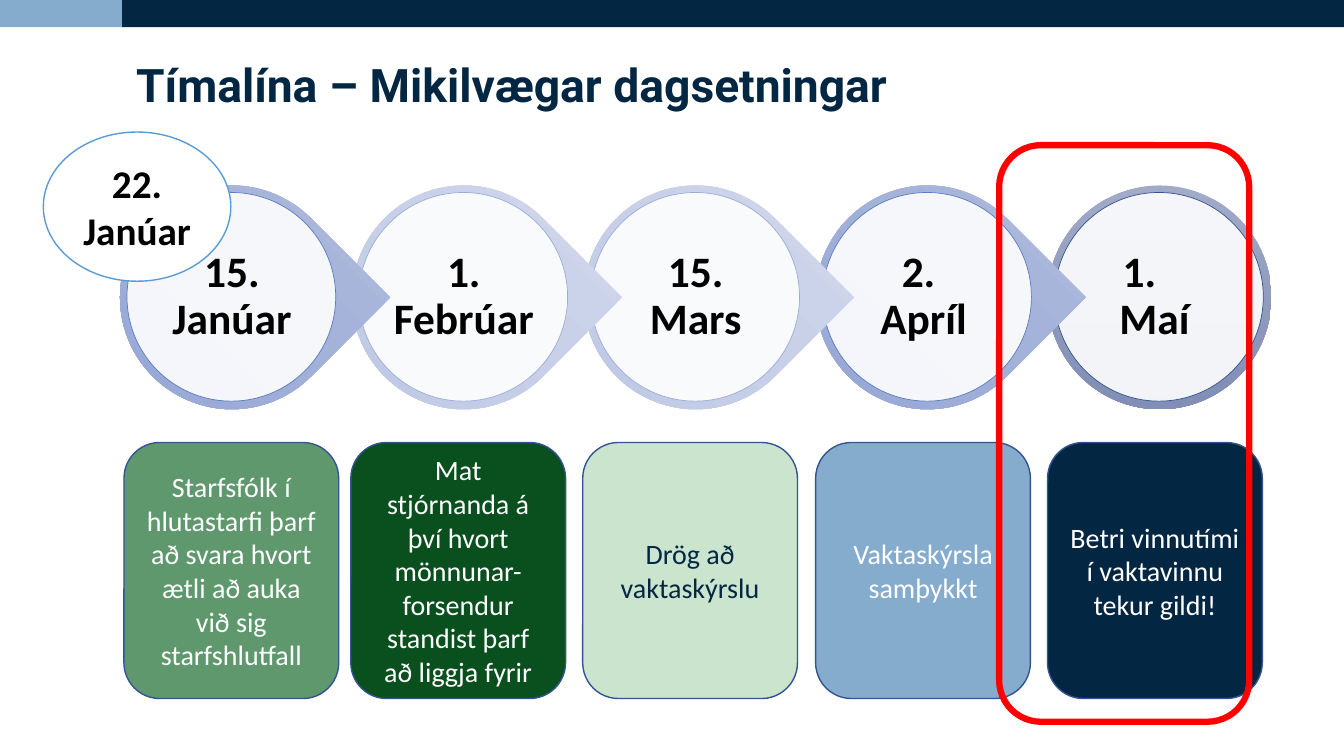
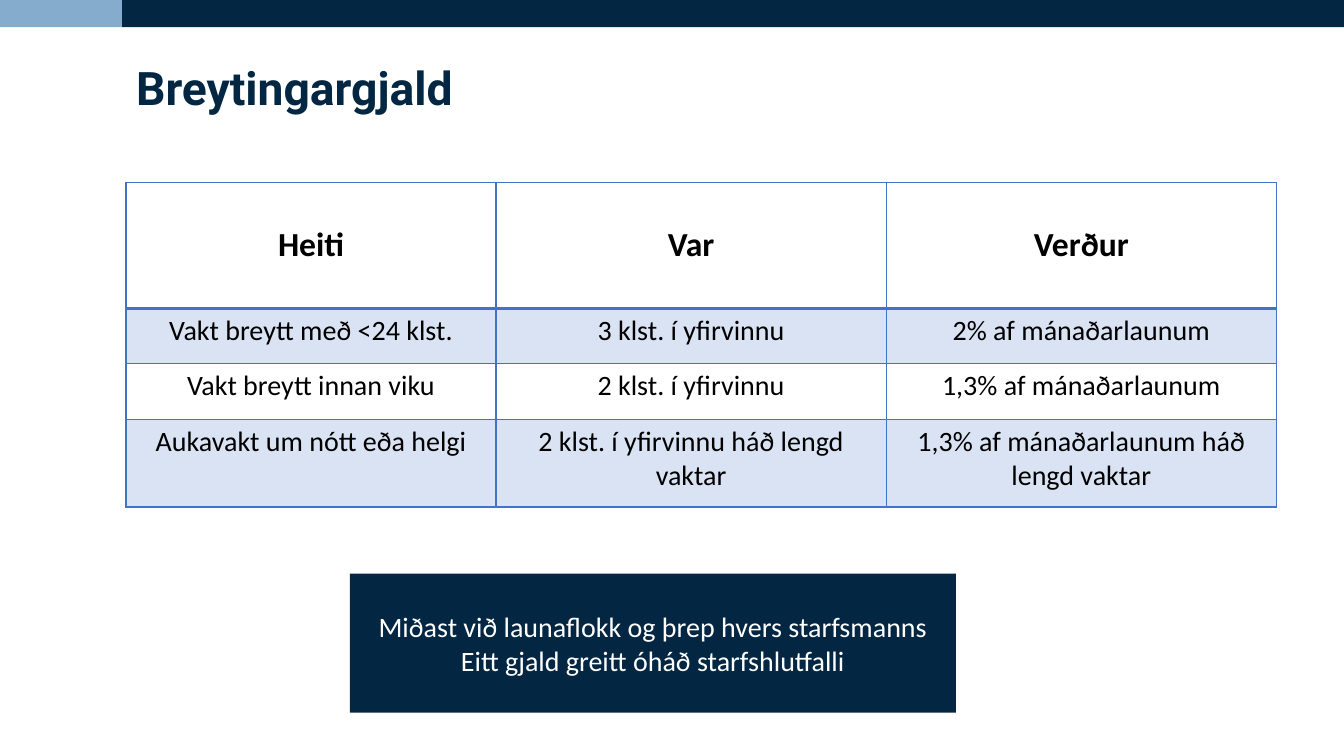
import pptx
import pptx.dml.color
import pptx.enum.shapes
import pptx.enum.text
import pptx.oxml
import pptx.oxml.ns
import pptx.util

Inches = pptx.util.Inches
SHAPES = pptx.enum.shapes.MSO_SHAPE
ANCHOR = pptx.enum.text.MSO_ANCHOR
ALIGN = pptx.enum.text.PP_ALIGN

# Shared colours and fonts
NAVY, SKY, WHITE, BLACK = "032742", "85ABCD", "FFFFFF", "000000"
OUTLINE, GRID, STRIPE = "325491", "4472C4", "DAE3F3"
TITLE_FONT, BODY_FONT = "Roboto", "Calibri"

# Gradient start, gradient end and ring line of the timeline markers
MEDIUM = ("B0BCDD", "92A4D4", "5B7BC0")
LIGHT = ("D2D8EC", "BCC7E4", "9DACD6")
DARK = ("A1AAC7", "818EB5", OUTLINE)

# Day, month, text shift, month indent, marker colours
DATES = [
    ("15.", "Janúar", 0, 0, MEDIUM),
    ("1.", "Febrúar", 0, 0, LIGHT),
    ("15.", "Mars", 0, 0, LIGHT),
    ("2.", "Apríl", -0.09, 0.1, MEDIUM),
    ("1.", "Maí", -0.2, 0.3, DARK),
]

# Left edge, text, fill, text colour
TASKS = [
    (1.23, "Starfsfólk í hlutastarfi þarf að svara hvort ætli að auka við sig "
           "starfshlutfall", "60986E", WHITE),
    (3.48, "Mat stjórnanda á því hvort mönnunar-forsendur standist þarf að "
           "liggja fyrir", "09501E", WHITE),
    (5.78, "Drög að vaktaskýrslu", "CBE4CE", NAVY),
    (8.09, "Vaktaskýrsla samþykkt", SKY, WHITE),
    (10.39, "Betri vinnutími í vaktavinnu tekur gildi!", NAVY, WHITE),
]

FEES = [
    ("Heiti", "Var", "Verður"),
    ("Vakt breytt með <24 klst.", "3 klst. í yfirvinnu", "2% af mánaðarlaunum"),
    ("Vakt breytt innan viku", "2 klst. í yfirvinnu", "1,3% af mánaðarlaunum"),
    ("Aukavakt um nótt eða helgi", "2 klst. í yfirvinnu háð lengd vaktar",
     "1,3% af mánaðarlaunum háð lengd vaktar"),
]
FEE_WIDTHS = (3.67, 3.87, 3.87)
FEE_HEIGHTS = (1.25, 0.55, 0.55, 0.87)


def color(value):
    return pptx.dml.color.RGBColor.from_string(value)


def style_paragraph(para, size, ink, bold=False, font=BODY_FONT, align=ALIGN.CENTER):
    para.alignment = align
    para.font.size = pptx.util.Pt(size)
    para.font.name = font
    para.font.bold = bold
    para.font.color.rgb = color(ink)


def write(frame, lines, size, ink, bold=False):
    """Fill a text frame with centred paragraphs."""
    frame.word_wrap = True
    frame.vertical_anchor = ANCHOR.MIDDLE
    frame.text = "\n".join(lines)
    for para in frame.paragraphs:
        style_paragraph(para, size, ink, bold)


def add_shape(page, kind, left, top, width, height, fill=None, line=None, weight=1):
    shape = page.shapes.add_shape(
        kind, Inches(left), Inches(top), Inches(width), Inches(height))
    shape.shadow.inherit = False
    if fill:
        shape.fill.solid()
        shape.fill.fore_color.rgb = color(fill)
    else:
        shape.fill.background()
    if line:
        shape.line.color.rgb = color(line)
        shape.line.width = pptx.util.Pt(weight)
    else:
        shape.line.fill.background()
    return shape


def add_page(deck, title, top):
    page = deck.slides.add_slide(deck.slide_layouts[5])
    box = page.shapes.title
    box.left, box.top = Inches(1.25), Inches(top)
    box.width, box.height = Inches(10.83), Inches(0.86)
    frame = box.text_frame
    frame.text = title
    frame.word_wrap = True
    frame.auto_size = pptx.enum.text.MSO_AUTO_SIZE.NONE
    frame.vertical_anchor = ANCHOR.TOP
    para = frame.paragraphs[0]
    style_paragraph(para, 33, NAVY, True, TITLE_FONT, ALIGN.LEFT)
    para.line_spacing = 0.9
    return page


def move_bands_to_layout(page):
    """Draw the top bands once and hand them to the layout of the page."""
    layout = page.slide_layout
    for holder in list(layout.placeholders)[1:]:
        layout.shapes.element.remove(holder.element)
    for left, width, fill in ((1.21, 12.12, NAVY), (0, 1.21, SKY)):
        band = add_shape(page, SHAPES.RECTANGLE, left, 0, width, 0.27, fill)
        layout.shapes.element.append(band.element)


def add_marker(page, left, date, is_last):
    day, month, shift, indent, (start, end, ring) = date
    kind = SHAPES.OVAL if is_last else SHAPES.TEAR
    drop = add_shape(page, kind, left, 1.84, 2.22, 2.22)
    if not is_last:
        drop.rotation = 45
    drop.fill.gradient()
    drop.fill.gradient_angle = 270
    for stop, shade in zip(drop.fill.gradient_stops, (start, end)):
        stop.color.rgb = color(shade)

    disc = add_shape(page, SHAPES.OVAL, left + 0.07, 1.91, 2.07, 2.07, WHITE, ring, 0.5)
    tint = disc.element.spPr.find(".//" + pptx.oxml.ns.qn("a:srgbClr"))
    tint.append(pptx.oxml.parse_xml(
        f'<a:alpha {pptx.oxml.ns.nsdecls("a")} val="90000"/>'))

    label = page.shapes.add_textbox(
        Inches(left + 0.37 + shift), Inches(2.21), Inches(1.48), Inches(1.48))
    frame = label.text_frame
    frame.margin_left = frame.margin_right = Inches(0.03)
    write(frame, (day, month), 31, BLACK, True)
    for para in frame.paragraphs:
        para.line_spacing = 0.9
    if indent:
        properties = frame.paragraphs[1].font._element.getparent()
        properties.set("marL", str(Inches(indent)))


def set_borders(cell, weights):
    """Draw the left, right, top and bottom borders of a cell."""
    properties = cell._tc.get_or_add_tcPr()
    for position, (side, weight) in enumerate(zip("LRTB", weights)):
        properties.insert(position, pptx.oxml.parse_xml(
            f'<a:ln{side} {pptx.oxml.ns.nsdecls("a")} w="{pptx.util.Pt(weight)}">'
            f'<a:solidFill><a:srgbClr val="{GRID}"/></a:solidFill></a:ln{side}>'))


def add_fee_table(page):
    table = page.shapes.add_table(
        len(FEES), len(FEE_WIDTHS), Inches(1.25), Inches(1.81),
        Inches(sum(FEE_WIDTHS)), Inches(sum(FEE_HEIGHTS))).table
    table.first_row = table.horz_banding = False
    for column, width in zip(table.columns, FEE_WIDTHS):
        column.width = Inches(width)
    for index, (row, height, texts) in enumerate(zip(table.rows, FEE_HEIGHTS, FEES)):
        row.height = Inches(height)
        is_header = index == 0
        for cell, text in zip(row.cells, texts):
            write(cell.text_frame, (text,), 24 if is_header else 20, BLACK, is_header)
            cell.vertical_anchor = ANCHOR.MIDDLE if is_header else ANCHOR.TOP
            if index % 2:
                cell.fill.solid()
                cell.fill.fore_color.rgb = color(STRIPE)
            else:
                cell.fill.background()
            set_borders(cell, (1, 1, 2 if index == 1 else 1, 2 if is_header else 1))


def build_timeline(page):
    # Markers overlap, so the last one is drawn first
    for index in reversed(range(len(DATES))):
        add_marker(page, 1.19 + 2.3 * index, DATES[index], index == len(DATES) - 1)
    for left, text, fill, ink in TASKS:
        card = add_shape(page, SHAPES.ROUNDED_RECTANGLE, left, 4.39, 2.13, 2.54,
                         fill, OUTLINE)
        write(card.text_frame, (text,), 20, ink)
    # Extra date and highlight frame
    bubble = add_shape(page, SHAPES.OVAL, 0.43, 1.31, 1.86, 1.48, WHITE, "5B9BD5")
    write(bubble.text_frame, ("22. Janúar",), 28, BLACK, True)
    add_shape(page, SHAPES.ROUNDED_RECTANGLE, 9.91, 1.44, 2.48, 5.72,
              line="FF0000", weight=4.5)


def build_fees(page):
    add_fee_table(page)
    note = add_shape(page, SHAPES.RECTANGLE, 3.47, 5.69, 6.01, 1.38, NAVY)
    write(note.text_frame, ("Miðast við launaflokk og þrep hvers starfsmanns",
                            "Eitt gjald greitt óháð starfshlutfalli"), 20, WHITE)


def main():
    deck = pptx.Presentation()
    deck.slide_width, deck.slide_height = Inches(13.33), Inches(7.5)
    timeline = add_page(deck, "Tímalína – Mikilvægar dagsetningar", 0.57)
    move_bands_to_layout(timeline)
    build_timeline(timeline)
    build_fees(add_page(deck, "Breytingargjald", 0.6))
    deck.save("out.pptx")


if __name__ == "__main__":
    main()
